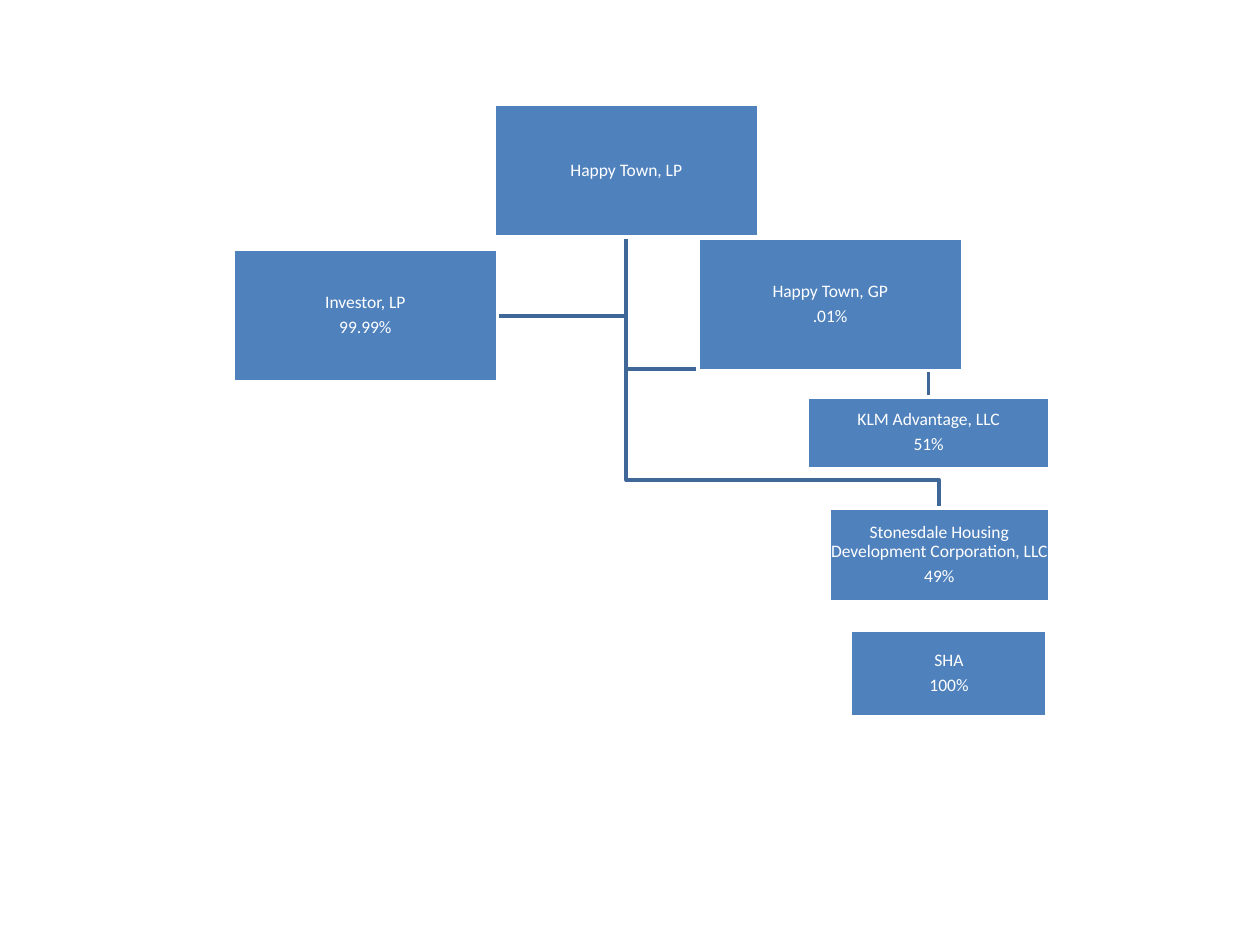
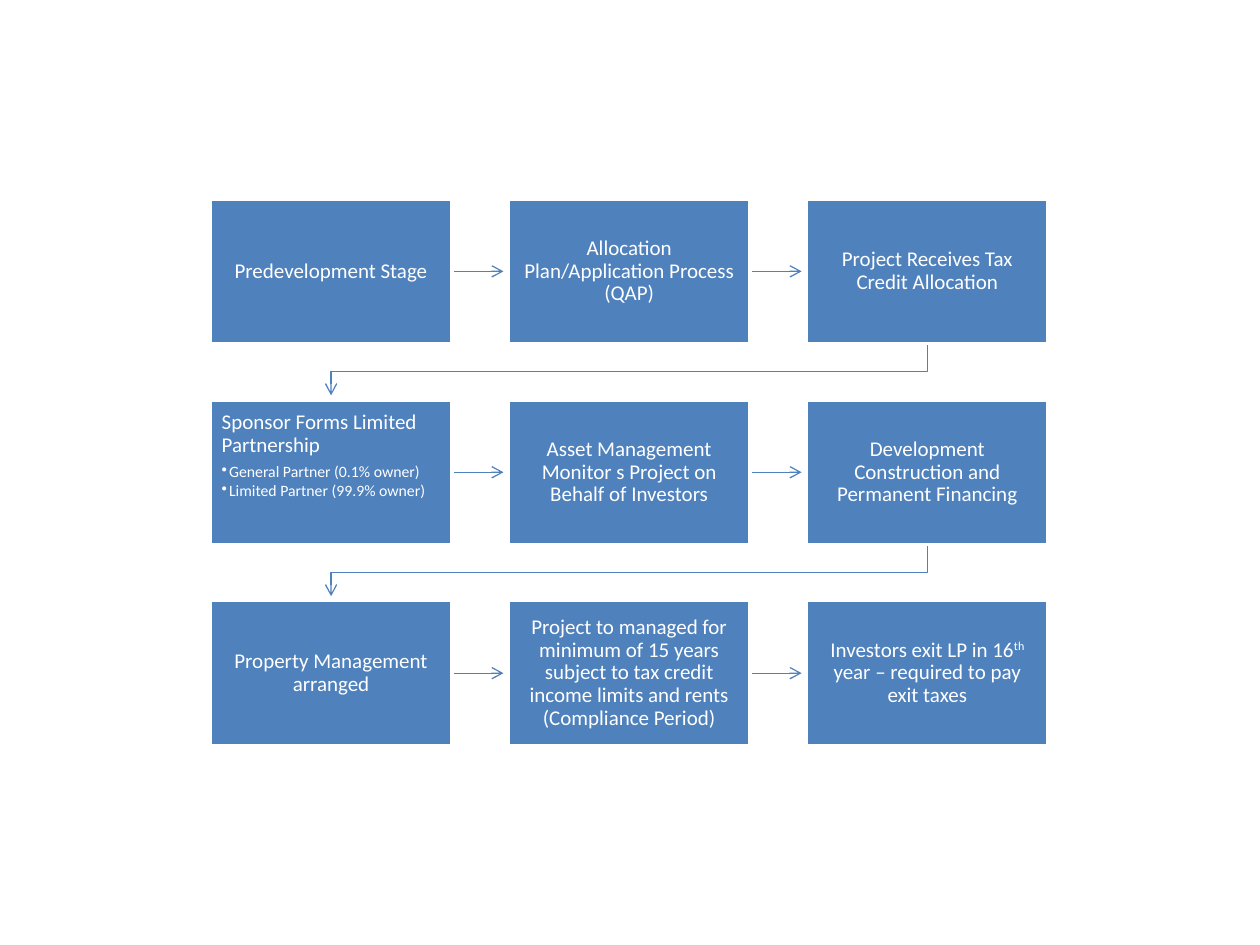
from dataclasses import dataclass

from lxml import etree
from pptx import Presentation
from pptx.dml.color import RGBColor
from pptx.enum.shapes import MSO_CONNECTOR, MSO_SHAPE
from pptx.enum.text import MSO_ANCHOR, PP_ALIGN
from pptx.oxml.ns import qn
from pptx.slide import Slide
from pptx.text.text import TextFrame
from pptx.util import Cm, Pt

RECT = MSO_SHAPE.RECTANGLE
STRAIGHT = MSO_CONNECTOR.STRAIGHT
MIDDLE, TOP = MSO_ANCHOR.MIDDLE, MSO_ANCHOR.TOP
CENTER, LEFT = PP_ALIGN.CENTER, PP_ALIGN.LEFT

FONT = "Calibri"
BLUE, DARK_BLUE, WHITE = "4F81BD", "3F6797", "FFFFFF"
BULLET_INDENT = Cm(0.15)
BLANK_LAYOUT = 6

Point = tuple[float, float]


@dataclass(frozen=True)
class Run:
    text: str
    superscript: bool = False


@dataclass(frozen=True)
class Para:
    runs: tuple[Run, ...]
    size: float
    bullet: bool = False


@dataclass(frozen=True)
class Box:
    """A filled box; lengths in centimetres."""
    left: float
    top: float
    width: float
    height: float
    paras: tuple[Para, ...]
    inset: float
    centered: bool = True

    @property
    def mid_x(self) -> float:
        return self.left + self.width / 2

    @property
    def mid_y(self) -> float:
        return self.top + self.height / 2

    @property
    def right(self) -> float:
        return self.left + self.width

    @property
    def bottom(self) -> float:
        return self.top + self.height


@dataclass(frozen=True)
class Route:
    """A line through points given in centimetres."""
    points: tuple[Point, ...]
    color: str
    weight: float
    arrow: bool = False


def rgb(color: str) -> RGBColor:
    return RGBColor.from_string(color)


def add_para(tf: TextFrame, para: Para, first: bool, align: PP_ALIGN) -> None:
    p = tf.paragraphs[0] if first else tf.add_paragraph()
    p.alignment = align
    p.line_spacing = 0.9
    p.space_after = Pt(para.size * (0.15 if para.bullet else 0.35))
    if para.bullet:
        p.level = 1
        pPr = p._p.get_or_add_pPr()
        pPr.set("marL", str(BULLET_INDENT))
        pPr.set("indent", str(-BULLET_INDENT))
        etree.SubElement(pPr, qn("a:buChar")).set("char", "•")
    for run in para.runs:
        r = p.add_run()
        r.text = run.text
        r.font.name = FONT
        r.font.size = Pt(para.size)
        r.font.color.rgb = rgb(WHITE)
        if run.superscript:
            r._r.get_or_add_rPr().set("baseline", "30000")


def draw_box(s: Slide, box: Box) -> None:
    sp = s.shapes.add_shape(RECT, Cm(box.left), Cm(box.top), Cm(box.width), Cm(box.height))
    sp.shadow.inherit = False
    sp.fill.solid()
    sp.fill.fore_color.rgb = rgb(BLUE)
    sp.line.color.rgb = rgb(WHITE)
    sp.line.width = Pt(2)
    tf = sp.text_frame
    tf.word_wrap = True
    tf.margin_left = tf.margin_right = tf.margin_top = tf.margin_bottom = Cm(box.inset)
    tf.vertical_anchor = MIDDLE if box.centered else TOP
    for i, para in enumerate(box.paras):
        add_para(tf, para, i == 0, CENTER if box.centered else LEFT)


def draw_route(s: Slide, route: Route) -> None:
    """Draw a connector for two points, an open outline for more."""
    start, *rest = [(Cm(x), Cm(y)) for x, y in route.points]
    if len(rest) == 1:
        sp = s.shapes.add_connector(STRAIGHT, *start, *rest[0])
    else:
        builder = s.shapes.build_freeform(*start)
        builder.add_line_segments(rest, close=False)
        sp = builder.convert_to_shape()
        sp.fill.background()
    sp.line.color.rgb = rgb(route.color)
    sp.line.width = Pt(route.weight)
    spPr = sp._element.spPr
    if route.arrow:
        etree.SubElement(spPr.find(qn("a:ln")), qn("a:tailEnd")).set("type", "arrow")
    etree.SubElement(spPr, qn("a:effectLst"))


def draw_diagram(prs: Presentation, routes: list[Route], boxes: list[Box]) -> None:
    s = prs.slides.add_slide(prs.slide_layouts[BLANK_LAYOUT])
    for route in routes:
        draw_route(s, route)
    for box in boxes:
        draw_box(s, box)


def build_ownership(prs: Presentation) -> None:
    def entity(left: float, top: float, *lines: str,
               width: float = 5.33, height: float = 2.67) -> Box:
        paras = tuple(Para((Run(line),), 10) for line in lines)
        return Box(left, top, width, height, paras, inset=0.02)

    partnership = entity(9.96, 2.11, "Happy Town, LP")
    advantage = entity(16.28, 8, "KLM Advantage, LLC", "51%", width=4.88, height=1.45)
    housing = entity(16.71, 10.24, "Stonesdale Housing Development Corporation, LLC",
                     "49%", width=4.45, height=1.9)
    general = entity(14.07, 4.8, "Happy Town, GP", ".01%")
    investor = entity(4.7, 5.03, "Investor, LP", "99.99%")
    authority = entity(17.15, 12.7, "SHA", "100%", width=3.96, height=1.75)

    trunk = (partnership.mid_x, 4.8)
    paths = [(trunk, (trunk[0], investor.mid_y), (investor.right, investor.mid_y))]
    for owner in (housing, advantage):
        bend = owner.top - 0.56
        paths.append((trunk, (trunk[0], bend), (owner.mid_x, bend), (owner.mid_x, owner.top)))
    draw_diagram(prs, [Route(path, DARK_BLUE, 2) for path in paths],
                 [partnership, advantage, housing, general, investor, authority])


def build_process(prs: Presentation) -> None:
    left, top, width, height = 4.24, 4.01, 4.87, 2.92
    col_pitch, row_pitch, columns = 6.01, 4.05, 3
    arrow_length, drop = 1.04, 0.56

    def step(*texts: str) -> tuple[Para, ...]:
        """One heading, with any further texts as bullets."""
        return tuple(Para((Run(text),), 9 if i else 12, bullet=i > 0)
                     for i, text in enumerate(texts))

    steps = [
        step("Predevelopment Stage"),
        step("Allocation Plan/Application Process (QAP)"),
        step("Project Receives Tax Credit Allocation"),
        step("Sponsor Forms Limited Partnership",
             "General Partner (0.1% owner)", "Limited Partner (99.9% owner)"),
        step("Asset Management Monitor s Project on Behalf of Investors"),
        step("Development Construction and Permanent Financing"),
        step("Property Management arranged"),
        step("Project to managed for minimum of 15 years subject to tax credit "
             "income limits and rents (Compliance Period)"),
        (Para((Run("Investors exit LP in 16"), Run("th", superscript=True),
               Run(" year – required to pay exit taxes")), 12),),
    ]
    boxes = []
    for i, paras in enumerate(steps):
        row, col = divmod(i, columns)
        boxes.append(Box(left + col * col_pitch, top + row * row_pitch, width, height,
                         paras, inset=0.23, centered=len(paras) == 1))

    routes = []
    for box, following in zip(boxes, boxes[1:]):
        if following.top == box.top:
            path = ((box.right, box.mid_y), (box.right + arrow_length, box.mid_y))
        else:
            bend = box.bottom + drop
            path = ((box.mid_x, box.bottom), (box.mid_x, bend), (following.mid_x, bend),
                    (following.mid_x, box.bottom + arrow_length))
        routes.append(Route(path, BLUE, 0.75, arrow=True))
    draw_diagram(prs, routes, boxes)


def main() -> None:
    prs = Presentation()
    prs.slide_width, prs.slide_height = Cm(25.4), Cm(19.05)
    build_ownership(prs)
    build_process(prs)
    prs.save("out.pptx")


if __name__ == "__main__":
    main()
